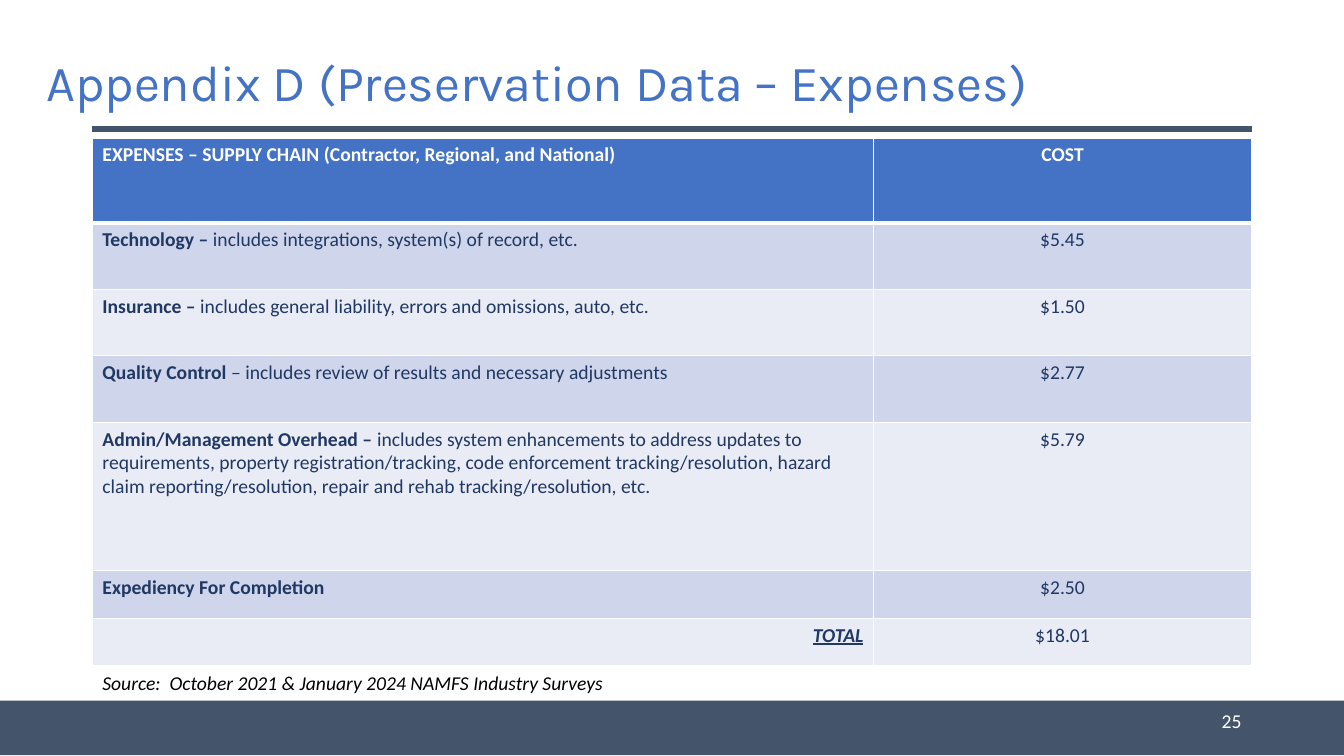
from lxml.etree import SubElement
from pptx import Presentation
from pptx.dml.color import RGBColor
from pptx.enum.shapes import MSO_CONNECTOR, MSO_SHAPE
from pptx.enum.text import MSO_ANCHOR, PP_ALIGN
from pptx.oxml import parse_xml
from pptx.oxml.ns import nsdecls, qn
from pptx.util import Pt

COLORS = {
    "slate": "44546A",
    "blue": "4472C4",
    "navy": "203864",
    "band_dark": "CFD5EA",
    "band_light": "E9EBF5",
    "white": "FFFFFF",
    "black": "000000",
}
LEFT, CONTENT_WIDTH = 66, 828
COLUMN_WIDTHS = [558, 270]
ROW_HEIGHTS = [60.5, 47.5, 47.5, 47.5, 106, 34, 34]
HEADER = ("EXPENSES – SUPPLY CHAIN (Contractor, Regional, and National)", "COST")
# Bold lead, plain description, cost
EXPENSES = [
    ("Technology – ", "includes integrations, system(s) of record, etc.", "$5.45"),
    ("Insurance – ", "includes general liability, errors and omissions, auto, etc.", "$1.50"),
    ("Quality Control ", "– includes review of results and necessary adjustments", "$2.77"),
    ("Admin/Management Overhead – ",
     "includes system enhancements to address updates to requirements, "
     "property registration/tracking, code enforcement tracking/resolution, "
     "hazard claim reporting/resolution, repair and rehab tracking/resolution, etc.",
     "$5.79"),
    ("Expediency For Completion", "", "$2.50"),
]
TOTAL = ("TOTAL", "$18.01")


def color(name):
    return RGBColor.from_string(COLORS[name])


def format_font(font, color_name, size=14, name="Calibri", bold=False, italic=False):
    font.name = name
    font.size = Pt(size)
    font.bold = bold
    font.italic = italic
    font.color.rgb = color(color_name)


def add_text(slide, box, text, color_name, anchor=MSO_ANCHOR.TOP,
             alignment=PP_ALIGN.LEFT, **font_options):
    shape = slide.shapes.add_textbox(*[Pt(length) for length in box])
    text_frame = shape.text_frame
    text_frame.word_wrap = True
    text_frame.vertical_anchor = anchor
    text_frame.text = text
    paragraph = text_frame.paragraphs[0]
    paragraph.alignment = alignment
    format_font(paragraph.runs[0].font, color_name, **font_options)
    return paragraph


def add_footer_band(slide):
    band = slide.shapes.add_shape(MSO_SHAPE.RECTANGLE, 0, Pt(500.5), Pt(960), Pt(39))
    band.shadow.inherit = False
    band.fill.solid()
    band.fill.fore_color.rgb = color("slate")
    band.line.fill.background()


def add_title_rule(slide):
    rule = slide.shapes.add_connector(
        MSO_CONNECTOR.STRAIGHT, Pt(LEFT), Pt(92), Pt(LEFT + CONTENT_WIDTH), Pt(92))
    rule.line.color.rgb = color("slate")
    rule.line.width = Pt(4)
    SubElement(rule.element.spPr, qn("a:effectLst"))


def style_cell(cell, fill_name, top=1, bottom=1):
    """Give the cell white borders, then its fill, in the order the schema needs."""
    properties = cell._tc.get_or_add_tcPr()
    for side, width in (("L", 1), ("R", 1), ("T", top), ("B", bottom)):
        properties.append(parse_xml(
            f'<a:ln{side} {nsdecls("a")} w="{Pt(width)}"><a:solidFill>'
            f'<a:srgbClr val="{COLORS["white"]}"/></a:solidFill></a:ln{side}>'))
    cell.fill.solid()
    cell.fill.fore_color.rgb = color(fill_name)


def write_cell(cell, parts, color_name, alignment=PP_ALIGN.LEFT):
    """Write (text, bold) parts as runs of one paragraph."""
    paragraph = cell.text_frame.paragraphs[0]
    paragraph.alignment = alignment
    for text, bold in parts:
        if text:
            run = paragraph.add_run()
            run.text = text
            format_font(run.font, color_name, bold=bold)
    return paragraph


def add_expense_table(slide):
    table = slide.shapes.add_table(
        len(ROW_HEIGHTS), len(COLUMN_WIDTHS), Pt(LEFT), Pt(98.75),
        Pt(CONTENT_WIDTH), Pt(sum(ROW_HEIGHTS))).table
    for column, width in zip(table.columns, COLUMN_WIDTHS):
        column.width = Pt(width)
    for index, (row, height) in enumerate(zip(table.rows, ROW_HEIGHTS)):
        row.height = Pt(height)
        band = "band_dark" if index % 2 else "band_light"
        for cell in row.cells:
            style_cell(cell, band if index else "blue",
                       top=3 if index == 1 else 1, bottom=1 if index else 3)

    write_cell(table.cell(0, 0), [(HEADER[0], True)], "white")
    write_cell(table.cell(0, 1), [(HEADER[1], True)], "white", PP_ALIGN.CENTER)
    for index, (lead, description, cost) in enumerate(EXPENSES, start=1):
        write_cell(table.cell(index, 0), [(lead, True), (description, False)], "navy")
        write_cell(table.cell(index, 1), [(cost, False)], "navy", PP_ALIGN.CENTER)

    last = len(ROW_HEIGHTS) - 1
    label = write_cell(table.cell(last, 0), [(TOTAL[0], True)], "navy", PP_ALIGN.RIGHT)
    label.runs[0].font.italic = True
    label.runs[0].font.underline = True
    write_cell(table.cell(last, 1), [(TOTAL[1], False)], "navy", PP_ALIGN.CENTER)


def main():
    presentation = Presentation()
    presentation.slide_width = Pt(960)
    presentation.slide_height = Pt(540)
    slide = presentation.slides.add_slide(presentation.slide_layouts[6])

    add_footer_band(slide)
    add_title_rule(slide)
    title = add_text(slide, (26, 29, 868, 63), "Appendix D (Preservation Data – Expenses)",
                     "blue", MSO_ANCHOR.MIDDLE, size=36, name="Karla")
    title.line_spacing = 0.9
    add_text(slide, (678, 500.5, 216, 28.75), "25", "white",
             MSO_ANCHOR.MIDDLE, PP_ALIGN.RIGHT)
    add_expense_table(slide)
    add_text(slide, (LEFT, 475.5, 471, 24.25),
             "Source:  October 2021 & January 2024 NAMFS Industry Surveys",
             "black", italic=True)

    presentation.save("out.pptx")


if __name__ == "__main__":
    main()
